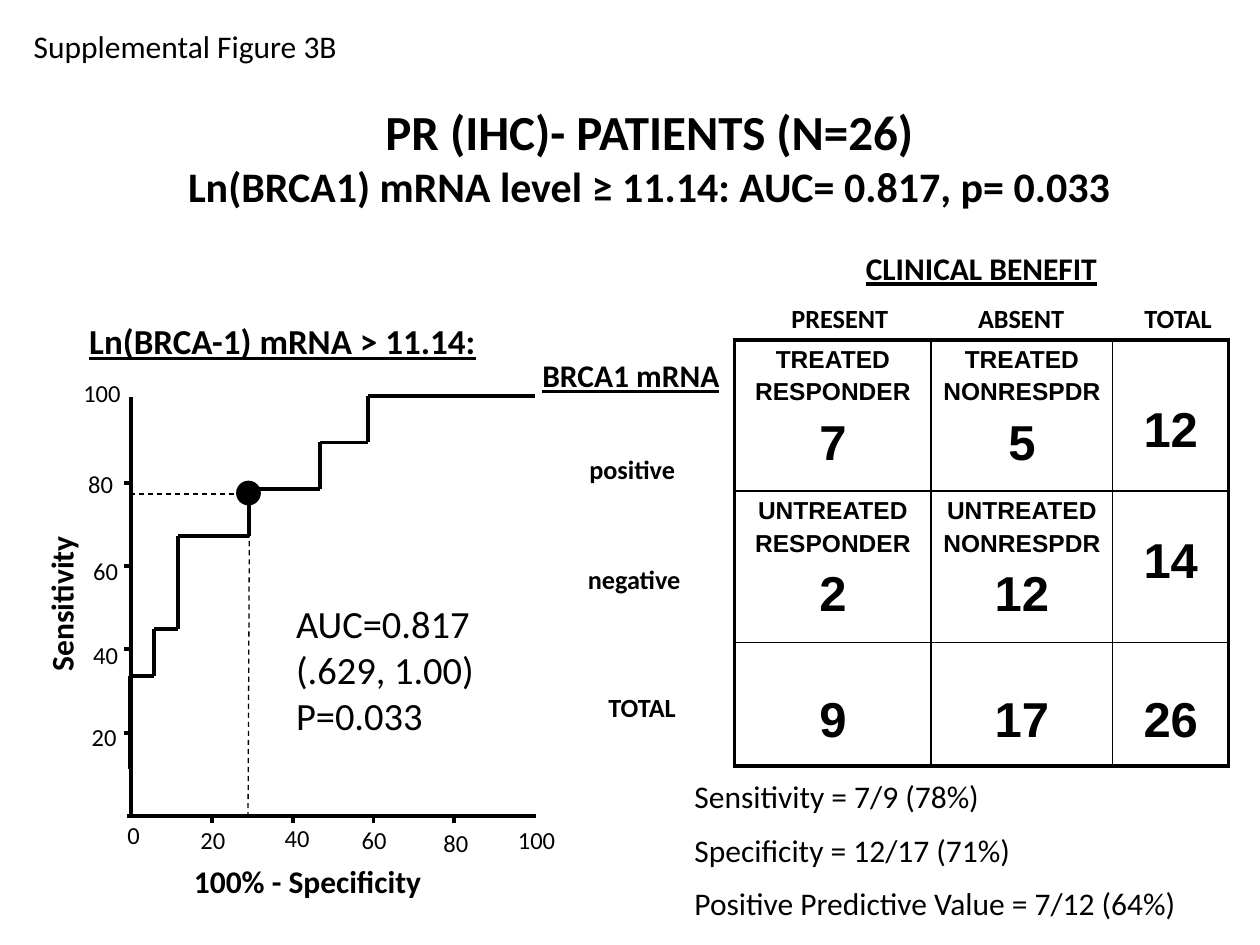
"""Build the slide with a ROC curve and a clinical benefit table."""
import dataclasses

import lxml.etree
import pptx
import pptx.dml.color
import pptx.enum.dml
import pptx.enum.shapes
import pptx.enum.text
import pptx.oxml.ns
import pptx.util

Cm = pptx.util.Cm
Pt = pptx.util.Pt
qn = pptx.oxml.ns.qn
ALIGN = pptx.enum.text.PP_ALIGN


@dataclasses.dataclass(frozen=True)
class Theme:
    ink: str = "000000"
    body_font: str = "Calibri"
    table_font: str = "Arial"
    title: int = 28
    subtitle: int = 24
    estimate: int = 22
    curve_title: int = 20
    body: int = 18
    label: int = 15
    small: int = 14
    count: int = 28
    heavy: float = 2.25
    thin: float = 1
    guide: float = 0.75


THEME = Theme()
INK = pptx.dml.color.RGBColor.from_string(THEME.ink)
AXIS_X, AXIS_Y = 2.64, 16.45
TICK_X, TICK_Y = 1.63, 1.68
STEP_X, STEP_Y = 0.48, 0.94
CURVE_STEPS = "UURURUURRRURRRURRURRRRRRR"
X_LABELS = [("0", 2.57, 16.54), ("20", 4.04, 16.64), ("40", 5.74, 16.59),
            ("60", 7.29, 16.64), ("80", 8.94, 16.69), ("100", 10.44, 16.64)]
Y_LABELS = [("20", 1.85, 14.55), ("40", 1.88, 12.9), ("60", 1.88, 11.2),
            ("80", 1.78, 9.45), ("100", 1.68, 7.62)]
COLUMN_WIDTHS = [3.96, 3.66, 2.34]
ROW_HEIGHTS = [3.05, 3.05, 2.49]
CELL_INSET = 0.2
COUNTS = [
    [["TREATED", "RESPONDER", "7"], ["TREATED", "NONRESPDR", "5"], ["12"]],
    [["UNTREATED", "RESPONDER", "2"], ["UNTREATED", "NONRESPDR", "12"], ["14"]],
    [["9"], ["17"], ["26"]],
]
TOTAL_DROPS = [1.27, 0.87, 1.02]


def write_run(paragraph, words, size, font=THEME.body_font, bold=False, underline=False):
    """Add one styled run to a paragraph."""
    run = paragraph.add_run()
    run.text = words
    run.font.name, run.font.size, run.font.bold = font, Pt(size), bold
    run.font.color.rgb = INK
    if underline:
        run.font.underline = True


def paragraph_at(frame, index):
    """Return the first paragraph of a frame or a newly added one."""
    return frame.add_paragraph() if index else frame.paragraphs[0]


def add_text(slide, place, lines, size, *, bold=False, underline=False,
             align=ALIGN.LEFT, gap=0, wrap=True, inset=True):
    """Add a text box with one paragraph for each line or (line, size) pair."""
    box = slide.shapes.add_textbox(*map(Cm, place))
    frame = box.text_frame
    frame.word_wrap = wrap
    frame.auto_size = pptx.enum.text.MSO_AUTO_SIZE.SHAPE_TO_FIT_TEXT
    if not inset:
        frame.margin_left = frame.margin_right = frame.margin_top = frame.margin_bottom = 0
    for index, line in enumerate(lines):
        words, points = line if isinstance(line, tuple) else (line, size)
        paragraph = paragraph_at(frame, index)
        paragraph.alignment = align
        paragraph.space_before = Pt(gap * points)
        write_run(paragraph, words, points, bold=bold, underline=underline)
    return box


def add_line(slide, start, end, width=THEME.heavy, dashed=False):
    """Draw a straight line between two points."""
    line = slide.shapes.add_connector(
        pptx.enum.shapes.MSO_CONNECTOR.STRAIGHT, *map(Cm, (*start, *end)))
    line.line.color.rgb = INK
    line.line.width = Pt(width)
    if dashed:
        line.line.dash_style = pptx.enum.dml.MSO_LINE.DASH
    properties = line._element.find(qn("p:spPr"))
    lxml.etree.SubElement(properties, qn("a:effectLst"))


def add_borders(cell, outer_sides):
    """Rule the four sides of a cell, heavier on the outer sides."""
    properties = cell._tc.get_or_add_tcPr()
    for side in "LRTB":
        width = THEME.heavy if side in outer_sides else THEME.thin
        border = lxml.etree.SubElement(properties, qn(f"a:ln{side}"), w=str(Pt(width)))
        fill = lxml.etree.SubElement(border, qn("a:solidFill"))
        lxml.etree.SubElement(fill, qn("a:srgbClr"), val=THEME.ink)


def fill_cell(cell, lines, drop):
    """Write group names and a count into a table cell."""
    cell.margin_left = cell.margin_right = Cm(CELL_INSET)
    if len(lines) == 1:
        cell.margin_top = Cm(drop)
    for index, words in enumerate(lines):
        size = THEME.count if words.isdigit() else THEME.small
        paragraph = paragraph_at(cell.text_frame, index)
        paragraph.alignment = ALIGN.CENTER
        paragraph.space_before = Pt(0.2 * size)
        write_run(paragraph, words, size, THEME.table_font, bold=True)


def add_benefit_table(slide):
    """Add the table of patient counts."""
    table = slide.shapes.add_table(
        3, 3, Cm(14.81), Cm(6.85), Cm(sum(COLUMN_WIDTHS)), Cm(sum(ROW_HEIGHTS))).table
    table.first_row = table.horz_banding = False
    for column, width in zip(table.columns, COLUMN_WIDTHS):
        column.width = Cm(width)
    for r, groups in enumerate(COUNTS):
        table.rows[r].height = Cm(ROW_HEIGHTS[r])
        for c, lines in enumerate(groups):
            cell = table.cell(r, c)
            add_borders(cell, ("T", "", "B")[r] + ("L", "", "R")[c])
            cell.fill.background()
            fill_cell(cell, lines, TOTAL_DROPS[r])


def add_table_labels(slide):
    """Add the headings around the table and the derived rates."""
    heading = dict(bold=True, underline=True, align=ALIGN.CENTER)
    add_text(slide, (10.36, 7.06, 4.72, 1.75), ["BRCA1 mRNA"], THEME.body, **heading)
    add_text(slide, (16.51, 4.9, 6.55, 0.99), ["CLINICAL BENEFIT"], THEME.body, **heading)
    for words, left, top, width, align in [
            ("positive", 11.63, 9.02, 3.38, ALIGN.LEFT),
            ("negative", 11.6, 11.23, 3.38, ALIGN.LEFT),
            ("TOTAL", 11, 13.82, 3.89, ALIGN.CENTER),
            ("PRESENT", 14.81, 5.97, 4.24, ALIGN.CENTER),
            ("ABSENT", 19.05, 5.97, 3.07, ALIGN.CENTER),
            ("TOTAL", 22.43, 5.97, 2.64, ALIGN.CENTER)]:
        add_text(slide, (left, top, width, 0.86), [words], THEME.label, bold=True, align=align)
    add_text(slide, (13.75, 15.54, 11.63, 3.3),
             ["Sensitivity = 7/9 (78%)", "Specificity = 12/17 (71%)",
              "Positive Predictive Value = 7/12 (64%)"], THEME.body, gap=0.5)


def add_curve(slide):
    """Draw the stepped curve, its axes and the cut-off point."""
    x, y = 2.62, 15.5
    for step in CURVE_STEPS:
        start = (x, y)
        x, y = (x, y - STEP_Y) if step == "U" else (x + STEP_X, y)
        add_line(slide, start, (x, y))
    add_line(slide, (AXIS_X, AXIS_Y), (AXIS_X, 8))
    add_line(slide, (2.57, AXIS_Y), (10.8, AXIS_Y))
    for tick in range(1, 5):
        tick_x, tick_y = AXIS_X + tick * TICK_X, AXIS_Y - tick * TICK_Y
        add_line(slide, (2.5, tick_y), (AXIS_X, tick_y))
        add_line(slide, (tick_x, 16.6), (tick_x, AXIS_Y))
    add_line(slide, (5.03, 10), (5, AXIS_Y), THEME.guide, dashed=True)
    add_line(slide, (5.08, 9.96), (AXIS_X, 9.96), THEME.guide, dashed=True)
    cutoff = slide.shapes.add_shape(
        pptx.enum.shapes.MSO_SHAPE.OVAL, Cm(4.8), Cm(9.73), Cm(0.42), Cm(0.42))
    cutoff.shadow.inherit = False
    cutoff.fill.solid()
    cutoff.fill.fore_color.rgb = cutoff.line.color.rgb = INK
    cutoff.line.width = Pt(THEME.heavy)


def add_curve_labels(slide):
    """Add the curve title, axis labels and estimate."""
    add_text(slide, (1.55, 6.32, 9.63, 1.09), ["Ln(BRCA-1) mRNA > 11.14:"],
             THEME.curve_title, bold=True, underline=True, wrap=False)
    for words, left, top in X_LABELS + Y_LABELS:
        add_text(slide, (left, top, 0.27 * len(words), 0.58), [words],
                 THEME.small, wrap=False, inset=False)
    add_text(slide, (5.97, 12.09, 4.62, 2.79), ["AUC=0.817", "(.629, 1.00)", "P=0.033"],
             THEME.estimate, inset=False)
    axis_title = dict(bold=True, wrap=False, inset=False)
    add_text(slide, (3.91, 17.37, 5.36, 0.76), ["100% - Specificity"], THEME.body, **axis_title)
    sensitivity = add_text(slide, (-0.36, 11.56, 3.18, 0.76), ["Sensitivity"],
                           THEME.body, **axis_title)
    sensitivity.rotation = 270


def main():
    """Build and save the presentation."""
    deck = pptx.Presentation()
    deck.slide_width, deck.slide_height = Cm(25.4), Cm(19.05)
    slide = deck.slides.add_slide(deck.slide_layouts[6])
    add_benefit_table(slide)
    add_table_labels(slide)
    add_curve(slide)
    add_curve_labels(slide)
    add_text(slide, (2.08, 1.93, 22.02, 2.44),
             [("PR (IHC)- PATIENTS (N=26)", THEME.title),
              ("Ln(BRCA1) mRNA level ≥ 11.14: AUC= 0.817, p= 0.033", THEME.subtitle)],
             THEME.title, bold=True, align=ALIGN.CENTER, wrap=False)
    add_text(slide, (0.43, 0.43, 19.69, 1.02), ["Supplemental Figure 3B"], THEME.body)
    deck.save("out.pptx")


if __name__ == "__main__":
    main()
